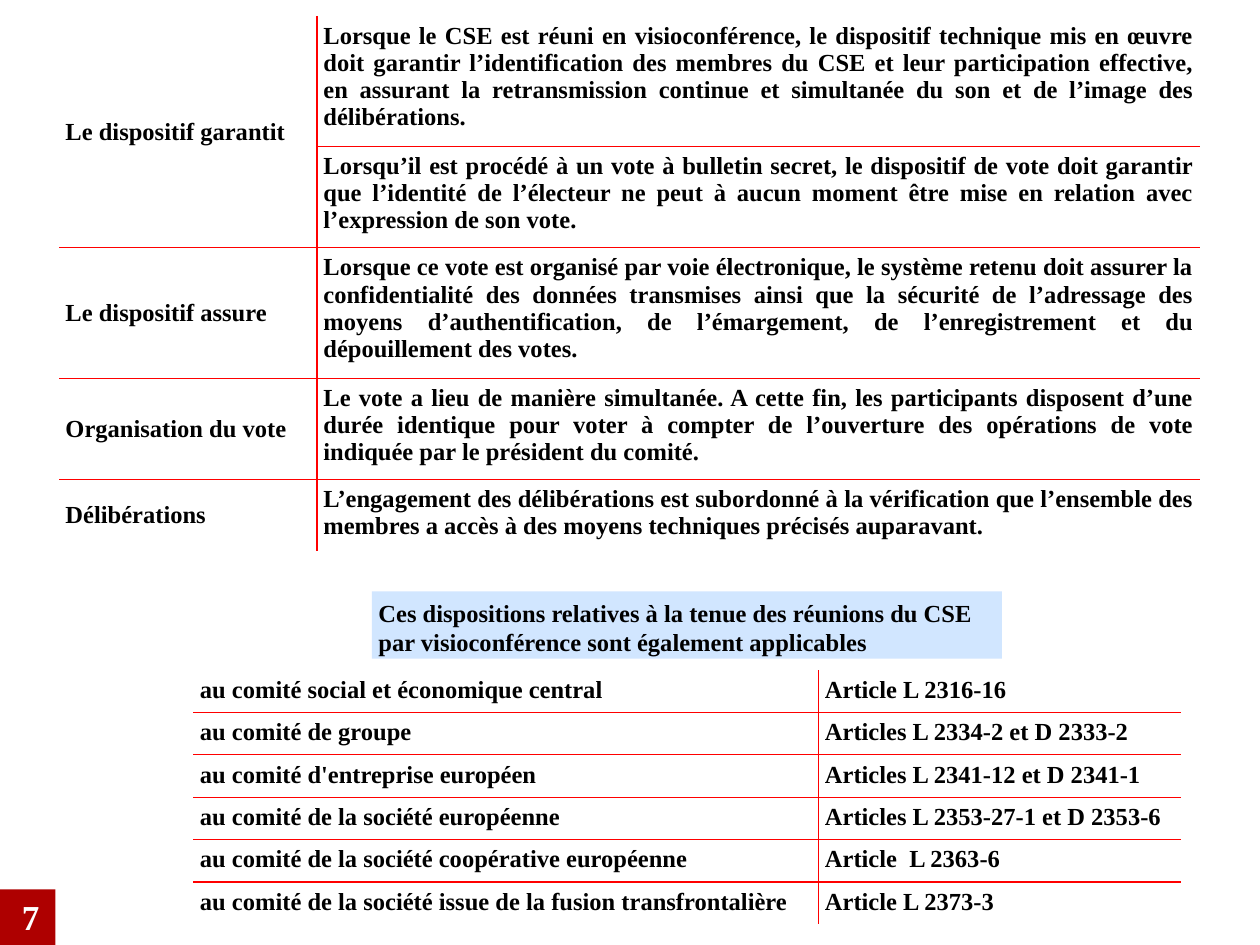
from lxml.etree import SubElement
from pptx import Presentation
from pptx.dml.color import RGBColor
from pptx.enum.shapes import MSO_SHAPE
from pptx.enum.text import MSO_ANCHOR, PP_ALIGN
from pptx.oxml import parse_xml
from pptx.oxml.ns import nsdecls, qn
from pptx.util import Cm, Pt

COLORS = {"text": "000000", "rule": "FF0000", "banner": "D1E6FF",
          "badge": "AE0000", "number": "FFFFFF"}

RULES = [
    ("Le dispositif garantit",
     "Lorsque le CSE est réuni en visioconférence, le dispositif technique mis en œuvre "
     "doit garantir l’identification des membres du CSE et leur participation effective, "
     "en assurant la retransmission continue et simultanée du son et de l’image des "
     "délibérations."),
    ("",
     "Lorsqu’il est procédé à un vote à bulletin secret, le dispositif de vote doit "
     "garantir que l’identité de l’électeur ne peut à aucun moment être mise en relation "
     "avec l’expression de son vote."),
    ("Le dispositif assure",
     "Lorsque ce vote est organisé par voie électronique, le système retenu doit assurer "
     "la confidentialité des données transmises ainsi que la sécurité de l’adressage des "
     "moyens d’authentification, de l’émargement, de l’enregistrement et du dépouillement "
     "des votes."),
    ("Organisation du vote",
     "Le vote a lieu de manière simultanée. A cette fin, les participants disposent d’une "
     "durée identique pour voter à compter de l’ouverture des opérations de vote indiquée "
     "par le président du comité."),
    ("Délibérations",
     "L’engagement des délibérations est subordonné à la vérification que l’ensemble des "
     "membres a accès à des moyens techniques précisés auparavant."),
]
ARTICLES = [
    ("au comité social et économique central", "Article L 2316-16"),
    ("au comité de groupe", "Articles L 2334-2 et D 2333-2"),
    ("au comité d'entreprise européen", "Articles L 2341-12 et D 2341-1"),
    ("au comité de la société européenne", "Articles L 2353-27-1 et D 2353-6"),
    ("au comité de la société coopérative européenne", "Article  L 2363-6"),
    ("au comité de la société issue de la fusion transfrontalière", "Article L 2373-3"),
]


class Page:
    font = "Times New Roman"
    size = 14
    inset = Cm(0.13)

    def __init__(self, slide):
        self.slide = slide

    def pad(self, box):
        box.margin_left = box.margin_right = self.inset
        box.margin_top = box.margin_bottom = self.inset

    def put(self, frame, text, align=PP_ALIGN.LEFT, size=size, color="text"):
        """Add one styled run to the first paragraph of a text frame."""
        frame.word_wrap = True
        para = frame.paragraphs[0]
        para.alignment = align
        run = para.add_run()
        run.text = text
        run.font.name = self.font
        run.font.size = Pt(size)
        run.font.bold = True
        run.font.color.rgb = RGBColor.from_string(COLORS[color])

    def block(self, left, top, width, height, fill):
        shape = self.slide.shapes.add_shape(
            MSO_SHAPE.RECTANGLE, Cm(left), Cm(top), Cm(width), Cm(height))
        shape.shadow.inherit = False
        shape.fill.solid()
        shape.fill.fore_color.rgb = RGBColor.from_string(COLORS[fill])
        shape.line.fill.background()
        self.pad(shape.text_frame)
        shape.text_frame.vertical_anchor = MSO_ANCHOR.TOP
        return shape

    def label(self, left, top, width, height, text, **style):
        box = self.slide.shapes.add_textbox(Cm(left), Cm(top), Cm(width), Cm(height))
        self.pad(box.text_frame)
        self.put(box.text_frame, text, **style)
        box.text_frame.word_wrap = False

    def border(self, cell, inner):
        """Rule the sides that face another cell and clear the outer ones."""
        props = cell._tc.get_or_add_tcPr()
        for spot, (side, ruled) in enumerate(inner.items()):
            line = parse_xml(f'<a:ln{side} {nsdecls("a")} w="{Pt(0.75)}"/>')
            if ruled:
                fill = SubElement(line, qn("a:solidFill"))
                SubElement(fill, qn("a:srgbClr"), val=COLORS["rule"])
            else:
                SubElement(line, qn("a:noFill"))
            props.insert(spot, line)

    def table(self, left, top, widths, heights, rows, align, anchor):
        """Draw rows of text; align and anchor hold one value per column."""
        grid = self.slide.shapes.add_table(
            len(rows), len(widths), Cm(left), Cm(top),
            Cm(sum(widths)), Cm(sum(heights))).table
        grid.first_row = grid.horz_banding = False
        for col, width in zip(grid.columns, widths):
            col.width = Cm(width)
        for row, height in zip(grid.rows, heights):
            row.height = Cm(height)
        for r, row in enumerate(rows):
            for c, text in enumerate(row):
                cell = grid.cell(r, c)
                self.pad(cell)
                cell.vertical_anchor = anchor[c]
                cell.fill.background()
                self.border(cell, {"L": c > 0, "R": c < len(widths) - 1,
                                   "T": r > 0, "B": r < len(rows) - 1})
                if text:
                    self.put(cell.text_frame, text, align[c])
        return grid


def main():
    deck = Presentation()
    deck.slide_width, deck.slide_height = Cm(25.4), Cm(19.05)
    page = Page(deck.slides.add_slide(deck.slide_layouts[6]))

    page.block(0, 17.93, 1.12, 1.12, "badge")
    page.label(0.3, 17.93, 0.64, 1.04, "7",
               align=PP_ALIGN.CENTER, size=20, color="number")

    grid = page.table(1.19, 0.32, [5.2, 17.81], [2.46, 1.9, 2.44, 1.9, 1.33], RULES,
                      [PP_ALIGN.LEFT, PP_ALIGN.JUSTIFY],
                      [MSO_ANCHOR.MIDDLE, MSO_ANCHOR.TOP])
    grid.cell(0, 0).merge(grid.cell(1, 0))

    banner = page.block(7.5, 11.92, 12.7, 1.36, "banner")
    page.put(banner.text_frame, "Ces dispositions relatives à la tenue des réunions du "
             "CSE par visioconférence sont également applicables")

    page.table(3.9, 13.51, [12.6, 7.3], [0.85] * len(ARTICLES), ARTICLES,
               [PP_ALIGN.LEFT] * 2, [MSO_ANCHOR.TOP] * 2)
    deck.save("out.pptx")


if __name__ == "__main__":
    main()
